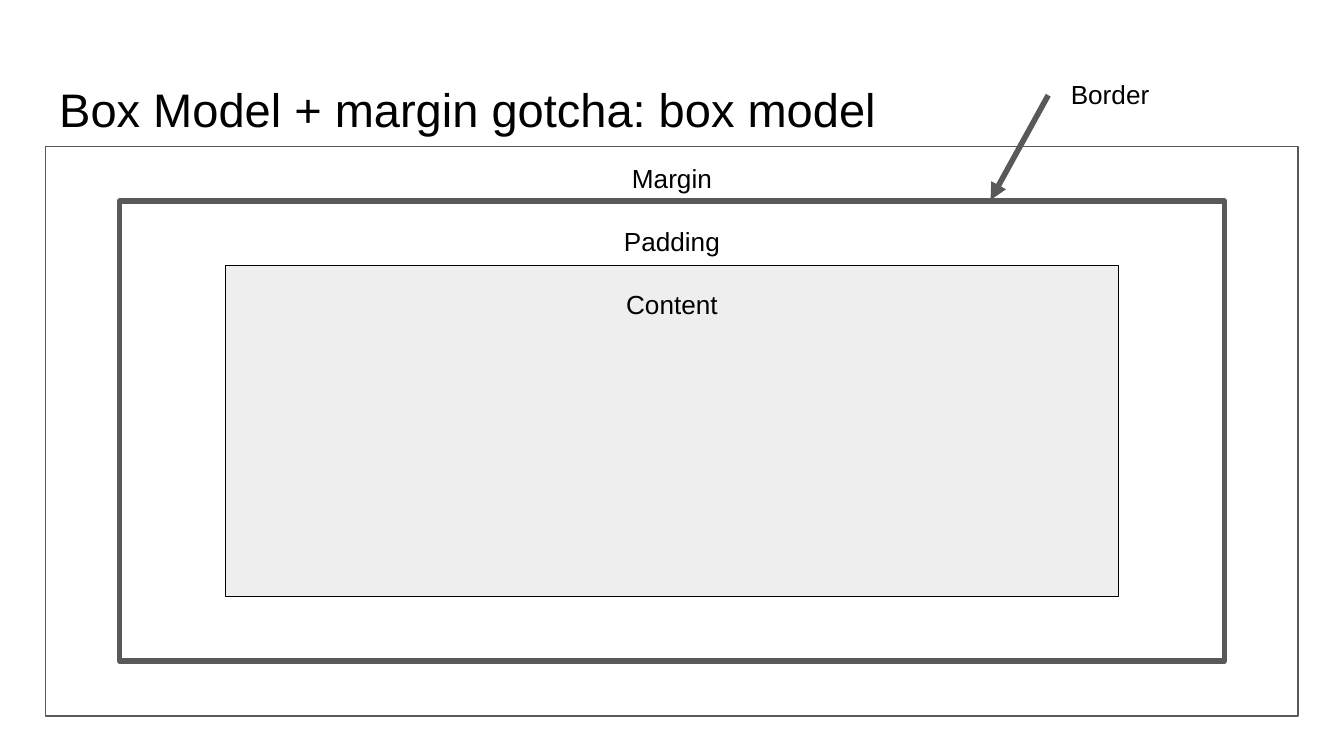
from lxml import etree
from pptx import Presentation
from pptx.dml.color import RGBColor
from pptx.enum.shapes import MSO_CONNECTOR, MSO_SHAPE
from pptx.enum.text import MSO_ANCHOR, PP_ALIGN
from pptx.oxml.ns import qn
from pptx.util import Cm, Pt

RECT = MSO_SHAPE.RECTANGLE
STRAIGHT = MSO_CONNECTOR.STRAIGHT
TOP, BOTTOM = MSO_ANCHOR.TOP, MSO_ANCHOR.BOTTOM
LEFT, CENTER = PP_ALIGN.LEFT, PP_ALIGN.CENTER
COLORS = {"text": "000000", "line": "595959", "content": "EEEEEE"}
FONT = "Arial"


def color(name):
    return RGBColor.from_string(COLORS[name])


def add_text(slide, text, x, y, w, h, size, align, anchor):
    sp = slide.shapes.add_textbox(Cm(x), Cm(y), Cm(w), Cm(h))
    tf = sp.text_frame
    tf.text = text
    tf.word_wrap = align == LEFT
    tf.vertical_anchor = anchor
    tf.margin_left = tf.margin_right = Cm(0.25)
    tf.margin_top = tf.margin_bottom = Cm(0.25)
    p = tf.paragraphs[0]
    p.alignment = align
    r = p.runs[0]
    r.font.name = FONT
    r.font.size = Pt(size)
    r.font.color.rgb = color("text")


prs = Presentation()
prs.slide_width = Cm(25.4)
prs.slide_height = Cm(14.29)
s = prs.slides.add_slide(prs.slide_layouts[6])

add_text(s, "Box Model + margin gotcha: box model",
         0.87, 1.24, 23.67, 1.6, 25.2, LEFT, BOTTOM)

center_x, center_y = 12.7, 8.15
boxes = [
    (23.67, 10.77, None, "line", 0.75),
    (20.88, 8.69, None, "line", 3),
    (16.87, 6.25, "content", "text", 0.75),
]
for w, h, fill, line, weight in boxes:
    sp = s.shapes.add_shape(RECT, Cm(center_x - w / 2), Cm(center_y - h / 2),
                            Cm(w), Cm(h))
    sp.shadow.inherit = False
    if fill:
        sp.fill.solid()
        sp.fill.fore_color.rgb = color(fill)
    else:
        sp.fill.background()
    sp.line.color.rgb = color(line)
    sp.line.width = Pt(weight)
    etree.SubElement(sp.line._get_or_add_ln(), qn("a:round"))

label_w, label_h = 2.34, 1.12
labels = [(text, center_x, 2.82 + i * 1.19)
          for i, text in enumerate(["Margin", "Padding", "Content"])]
labels.append(("Border", 20.98, 1.24))
for text, x, y in labels:
    add_text(s, text, x - label_w / 2, y, label_w, label_h, 14, CENTER, TOP)

arrow = s.shapes.add_connector(STRAIGHT, Cm(19.81), Cm(1.8), Cm(18.72), Cm(3.78))
arrow.line.color.rgb = color("line")
arrow.line.width = Pt(3)
ln = arrow.line._get_or_add_ln()
etree.SubElement(ln, qn("a:round"))
etree.SubElement(ln, qn("a:tailEnd"), type="triangle")
etree.SubElement(arrow._element.spPr, qn("a:effectLst"))

prs.save("out.pptx")
